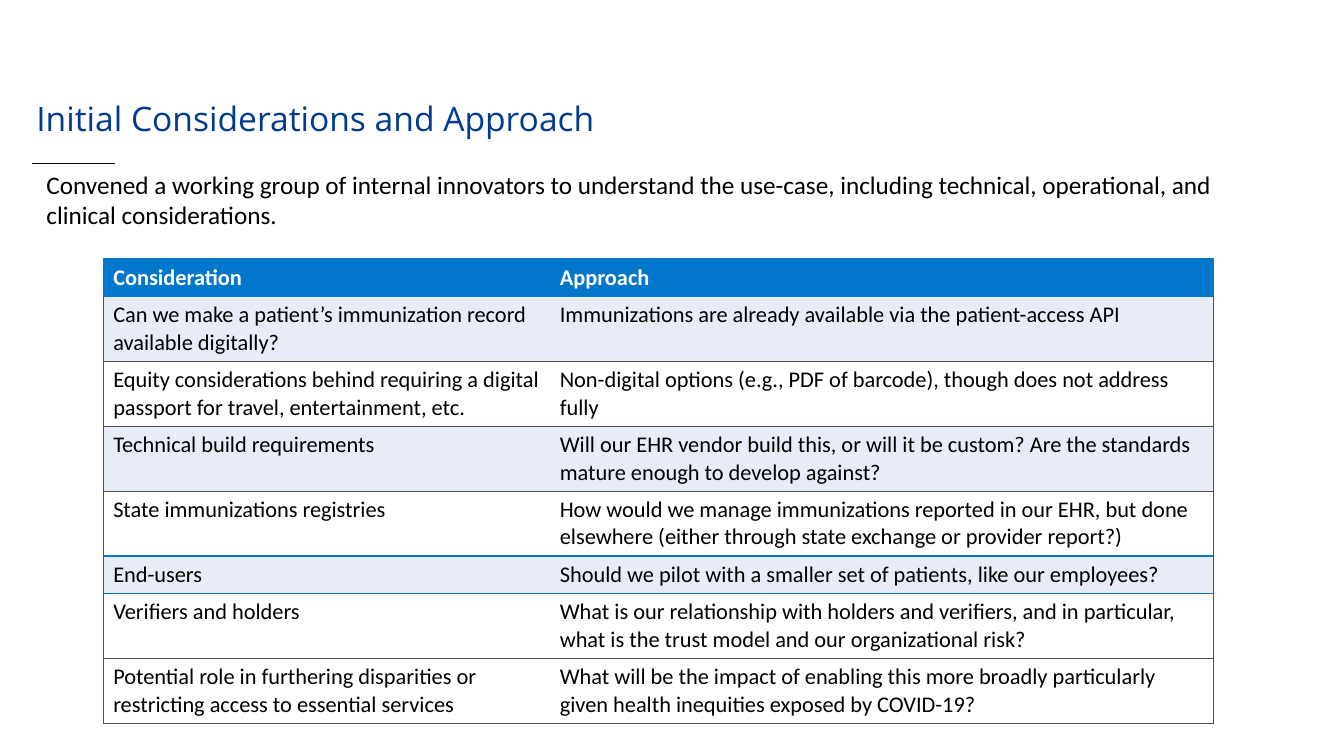
from dataclasses import dataclass

from lxml import etree
from pptx import Presentation
from pptx.dml.color import RGBColor
from pptx.enum import shapes, text
from pptx.oxml import ns
from pptx.util import Pt


@dataclass(frozen=True)
class Theme:
    """Colours, fonts and type sizes of the slide."""
    navy: str = "003A93"
    blue: str = "0077CA"
    tint: str = "E7ECF6"
    grey: str = "505050"
    white: str = "FFFFFF"
    black: str = "000000"
    heading_font: str = "Open Sans"
    body_font: str = "Calibri"
    title_size: int = 24
    intro_size: int = 18
    table_size: int = 16


THEME = Theme()
TITLE = "Initial Considerations and Approach"
INTRO = ("Convened a working group of internal innovators to understand the use-case, "
         "including technical, operational, and clinical considerations.")
HEADINGS = ("Consideration", "Approach")
CONSIDERATIONS = [
    ("Can we make a patient’s immunization record available digitally?",
     "Immunizations are already available via the patient-access API"),
    ("Equity considerations behind requiring a digital passport for travel, entertainment, etc.",
     "Non-digital options (e.g., PDF of barcode), though does not address fully"),
    ("Technical build requirements",
     "Will our EHR vendor build this, or will it be custom? "
     "Are the standards mature enough to develop against?"),
    ("State immunizations registries",
     "How would we manage immunizations reported in our EHR, but done elsewhere "
     "(either through state exchange or provider report?)"),
    ("End-users",
     "Should we pilot with a smaller set of patients, like our employees?"),
    ("Verifiers and holders",
     "What is our relationship with holders and verifiers, and in particular, "
     "what is the trust model and our organizational risk?"),
    ("Potential role in furthering disparities or restricting access to essential services",
     "What will be the impact of enabling this more broadly particularly "
     "given health inequities exposed by COVID-19?"),
]
COLUMN_WIDTHS = (319, 474)
SHORT_ROW, TALL_ROW = 26.4, 45.7
END_USERS_ROW = 5
TINTED_ROWS = (1, 3, 5)


def apply(target, values):
    """Set each named attribute of the target."""
    for name, value in values.items():
        setattr(target, name, value)


def style_font(font, size, colour, name=THEME.body_font, bold=False):
    """Give a font its face, size, weight and colour."""
    apply(font, {"name": name, "size": Pt(size), "bold": bold})
    font.color.rgb = RGBColor.from_string(colour)


def fill_placeholder(holder, words, box, inset, spacing, **font):
    """Place a placeholder and write one plain paragraph in it."""
    apply(holder, dict(zip(("left", "top", "width", "height"), map(Pt, box))))
    frame = holder.text_frame
    across, down = map(Pt, inset)
    apply(frame, {
        "text": words, "word_wrap": True, "auto_size": text.MSO_AUTO_SIZE.NONE,
        "vertical_anchor": text.MSO_ANCHOR.TOP,
        "margin_left": across, "margin_right": across,
        "margin_top": down, "margin_bottom": down,
    })
    paragraph = frame.paragraphs[0]
    apply(paragraph, {"alignment": text.PP_ALIGN.LEFT, "line_spacing": spacing,
                      "space_before": Pt(0)})
    properties = paragraph._p.get_or_add_pPr()
    properties.set("marL", "0")
    properties.set("indent", "0")
    etree.SubElement(properties, ns.qn("a:buNone"))
    style_font(paragraph.font, **font)


def add_rule(slide, start, end, colour, weight):
    """Draw a thin straight line without a shadow."""
    rule = slide.shapes.add_connector(
        shapes.MSO_CONNECTOR.STRAIGHT, *map(Pt, start + end))
    rule.line.color.rgb = RGBColor.from_string(colour)
    rule.line.width = Pt(weight)
    etree.SubElement(rule._element.spPr, ns.qn("a:effectLst"))


def add_border(cell, side, edge):
    """Add one cell border, or a clear one when the edge is None."""
    colour, weight = edge or (None, 0)
    line = etree.SubElement(cell._tc.get_or_add_tcPr(), ns.qn(f"a:ln{side}"),
                            w=str(int(Pt(weight))))
    if colour:
        fill = etree.SubElement(line, ns.qn("a:solidFill"))
        etree.SubElement(fill, ns.qn("a:srgbClr"), val=colour)
    else:
        etree.SubElement(line, ns.qn("a:noFill"))


def row_edge(boundary):
    """Return the colour and weight of the line above a row."""
    if boundary in (0, 1):
        return THEME.blue, 1
    if boundary in (END_USERS_ROW, END_USERS_ROW + 1):
        return THEME.blue, 1.5
    return THEME.grey, 0.75


def fill_cell(cell, words, row, column):
    """Write, border and colour one table cell."""
    header = row == 0
    side = (THEME.blue, 1) if header else (THEME.grey, 0.75)
    edges = {"L": side if column == 0 else None,
             "R": side if column == len(HEADINGS) - 1 else None,
             "T": row_edge(row), "B": row_edge(row + 1)}
    for name, edge in edges.items():
        add_border(cell, name, edge)
    shade = THEME.blue if header else THEME.tint if row in TINTED_ROWS else THEME.white
    cell.fill.solid()
    cell.fill.fore_color.rgb = RGBColor.from_string(shade)
    cell.text = words
    style_font(cell.text_frame.paragraphs[0].runs[0].font, THEME.table_size,
               THEME.white if header else THEME.black, bold=header)


def add_considerations(slide, left, top):
    """Build the table of considerations and approaches."""
    rows = [HEADINGS] + CONSIDERATIONS
    heights = [SHORT_ROW if row in (0, END_USERS_ROW) else TALL_ROW
               for row in range(len(rows))]
    table = slide.shapes.add_table(
        len(rows), len(HEADINGS), Pt(left), Pt(top),
        Pt(sum(COLUMN_WIDTHS)), Pt(sum(heights))).table
    table.horz_banding = False
    for column, width in zip(table.columns, COLUMN_WIDTHS):
        column.width = Pt(width)
    for row, (entries, height) in enumerate(zip(rows, heights)):
        table.rows[row].height = Pt(height)
        for column, words in enumerate(entries):
            fill_cell(table.cell(row, column), words, row, column)


def main():
    """Build and save the slide."""
    deck = Presentation()
    apply(deck, {"slide_width": Pt(960), "slide_height": Pt(540)})
    slide = deck.slides.add_slide(deck.slide_layouts[1])
    add_rule(slide, (23, 116.6), (82, 116.6), THEME.black, 0.5)
    add_considerations(slide, 73.7, 185)
    fill_placeholder(slide.placeholders[1], INTRO, (26, 117.4, 875.5, 51), (7.2, 3.6), 1.0,
                     size=THEME.intro_size, colour=THEME.black)
    fill_placeholder(slide.shapes.title, TITLE, (26, 73.4, 858, 75.6), (0, 0), 0.9,
                     size=THEME.title_size, colour=THEME.navy, name=THEME.heading_font)
    deck.save("out.pptx")


if __name__ == "__main__":
    main()
